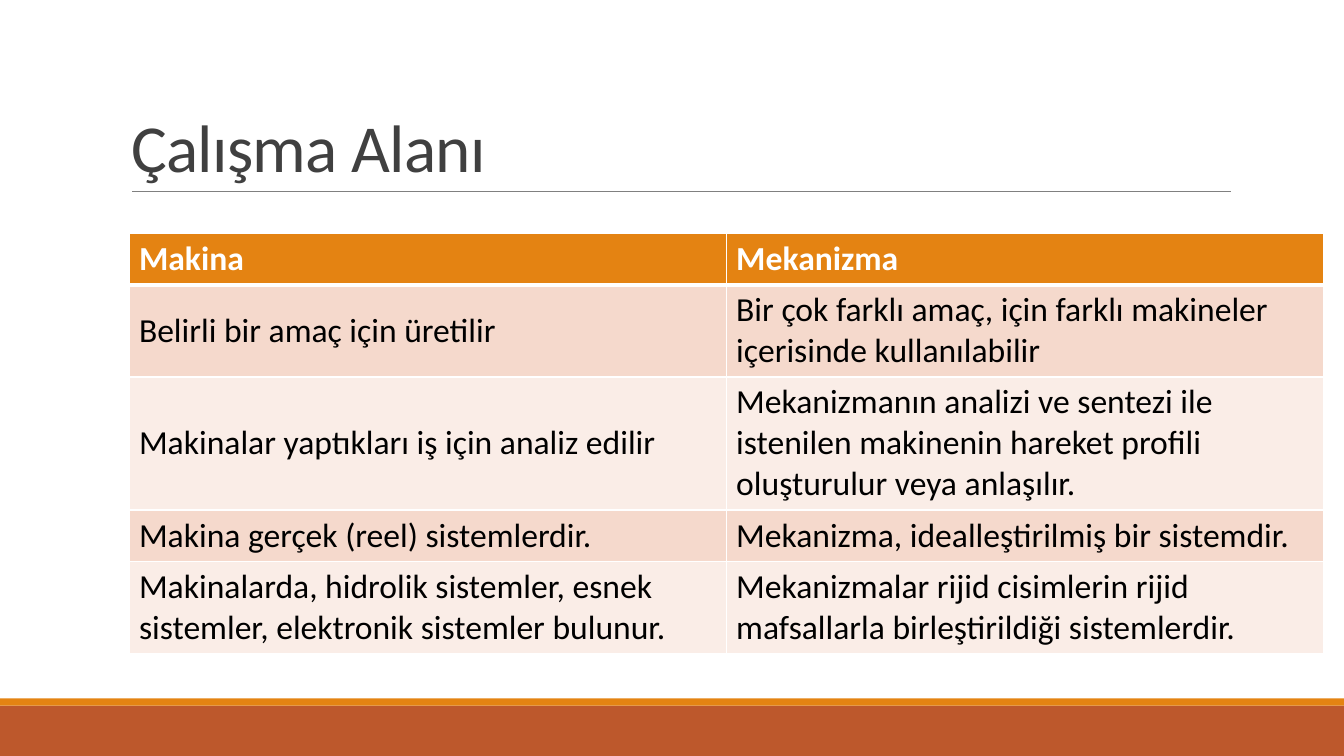
from dataclasses import dataclass

import lxml.etree
import pptx
import pptx.dml.color
import pptx.enum.shapes
import pptx.enum.text
import pptx.oxml.ns
import pptx.util

Cm = pptx.util.Cm
Pt = pptx.util.Pt
ANCHOR = pptx.enum.text.MSO_ANCHOR
ORANGE = "E48312"
WHITE = "FFFFFF"
BANDS = ("F5D9CC", "FAEDE7")


@dataclass
class Bar:
    top: float
    height: float
    color: str


@dataclass
class Row:
    height: float
    machine: str
    mechanism: str


BARS = [Bar(17.78, 1.27, "BD582C"), Bar(17.6, 0.18, ORANGE)]
ROWS = [
    Row(1.27, "Makina", "Mekanizma"),
    Row(2.31, "Belirli bir amaç için üretilir",
        "Bir çok farklı amaç, için farklı makineler içerisinde kullanılabilir"),
    Row(3.35, "Makinalar yaptıkları iş için analiz edilir",
        "Mekanizmanın analizi ve sentezi ile istenilen makinenin hareket profili "
        "oluşturulur veya anlaşılır."),
    Row(1.27, "Makina gerçek (reel) sistemlerdir.",
        "Mekanizma, idealleştirilmiş bir sistemdir."),
    Row(2.31, "Makinalarda, hidrolik sistemler, esnek sistemler, elektronik sistemler bulunur.",
        "Mekanizmalar rijid cisimlerin rijid mafsallarla birleştirildiği sistemlerdir."),
]


def rgb(color: str) -> pptx.dml.color.RGBColor:
    return pptx.dml.color.RGBColor.from_string(color)


def sub(parent, tag: str, **attrs: str):
    return lxml.etree.SubElement(parent, pptx.oxml.ns.qn(tag), **attrs)


def write(tf, text: str, *, size: float, color: str, bold: bool = False,
          spacing: int = 0, line_spacing: float = 1.0) -> None:
    p = tf.paragraphs[0]
    p.alignment = pptx.enum.text.PP_ALIGN.LEFT
    p.line_spacing = line_spacing
    r = p.add_run()
    r.text = text
    r.font.name = "Calibri"
    r.font.size = Pt(size)
    r.font.bold = bold
    r.font.color.rgb = rgb(color)
    if spacing:
        r.font._element.set("spc", str(spacing))


def add_bar(s, bar: Bar, width: int) -> None:
    sp = s.shapes.add_shape(pptx.enum.shapes.MSO_SHAPE.RECTANGLE,
                            0, Cm(bar.top), width, Cm(bar.height))
    sp.shadow.inherit = False
    sp.fill.solid()
    sp.fill.fore_color.rgb = rgb(bar.color)
    sp.line.fill.background()


def add_rule(s) -> None:
    line = s.shapes.add_connector(pptx.enum.shapes.MSO_CONNECTOR.STRAIGHT,
                                  Cm(3.33), Cm(4.82), Cm(31.01), Cm(4.82))
    line.line.color.rgb = rgb("808080")
    line.line.width = Pt(0.5)
    sub(line._element.spPr, "a:effectLst")


def add_title(s, text: str) -> None:
    title = s.shapes.title
    title.left, title.top, title.width, title.height = Cm(3.05), Cm(0.79), Cm(27.94), Cm(4.04)
    tf = title.text_frame
    tf.auto_size = pptx.enum.text.MSO_AUTO_SIZE.NONE
    tf.word_wrap = True
    tf.vertical_anchor = ANCHOR.BOTTOM
    write(tf, text, size=48, color="404040", spacing=-50, line_spacing=0.85)


def format_cell(cell, text: str, row: int) -> None:
    header = row == 0
    widths = {"L": 1, "R": 1, "T": 3 if row == 1 else 1, "B": 3 if header else 1}
    tc_pr = cell._tc.get_or_add_tcPr()
    for side, width in widths.items():
        ln = sub(tc_pr, f"a:ln{side}", w=str(Pt(width)))
        sub(sub(ln, "a:solidFill"), "a:srgbClr", val=WHITE)
    cell.fill.solid()
    cell.fill.fore_color.rgb = rgb(ORANGE if header else BANDS[(row - 1) % 2])
    cell.vertical_anchor = ANCHOR.TOP if header else ANCHOR.MIDDLE
    write(cell.text_frame, text, size=24, color=WHITE if header else "000000", bold=header)


def add_comparison(s, rows: list[Row]) -> None:
    height = sum(row.height for row in rows)
    table = s.shapes.add_table(len(rows), 2, Cm(3.25), Cm(5.89), Cm(30.1), Cm(height)).table
    for i, row in enumerate(rows):
        table.rows[i].height = Cm(row.height)
        for j, text in enumerate((row.machine, row.mechanism)):
            format_cell(table.cell(i, j), text, i)


def main() -> None:
    prs = pptx.Presentation()
    prs.slide_width, prs.slide_height = Cm(33.87), Cm(19.05)
    s = prs.slides.add_slide(prs.slide_layouts[5])
    for bar in BARS:
        add_bar(s, bar, prs.slide_width)
    add_rule(s)
    add_title(s, "Çalışma Alanı")
    add_comparison(s, ROWS)
    prs.save("out.pptx")


if __name__ == "__main__":
    main()
